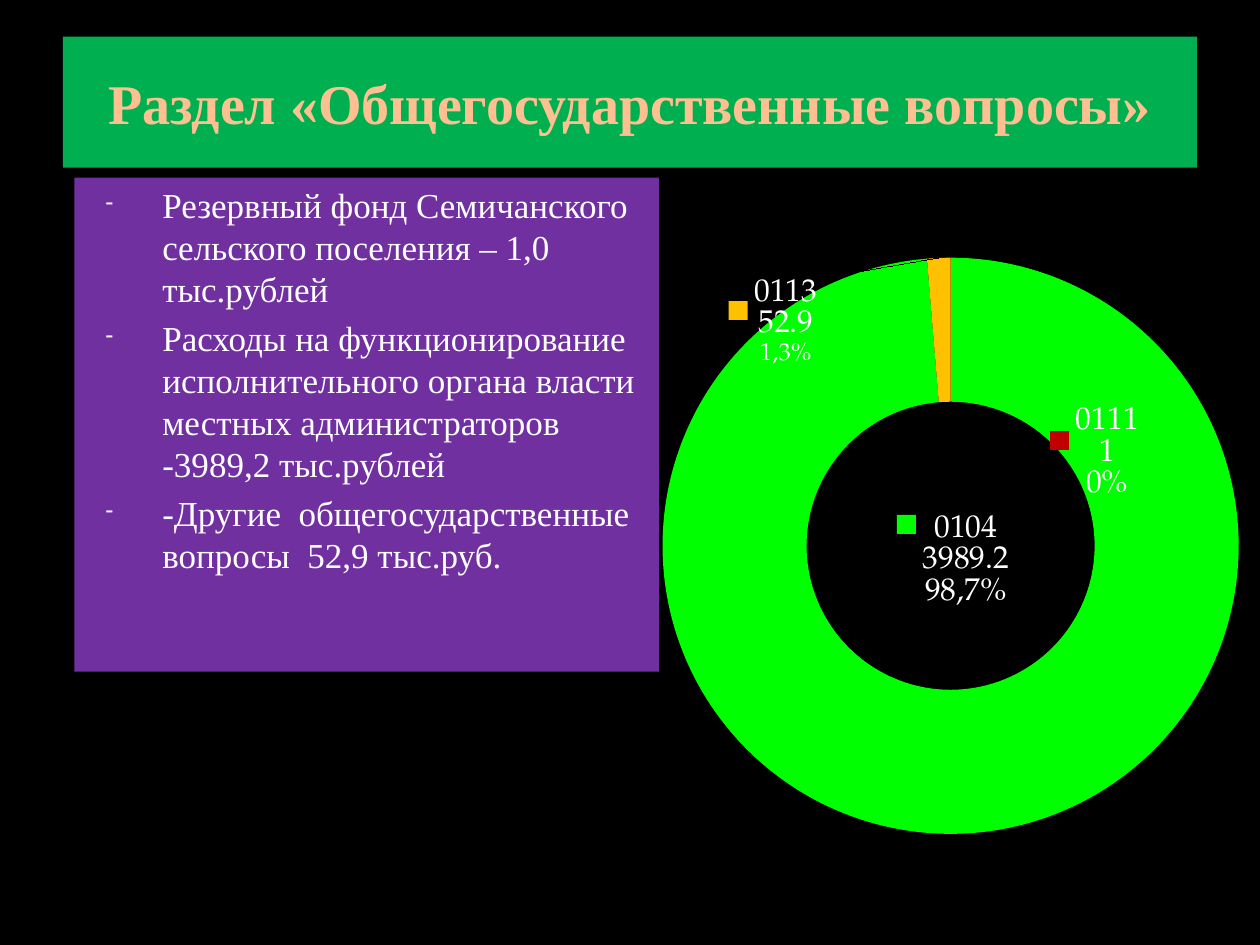
from lxml import etree
from pptx import Presentation
from pptx.chart.data import CategoryChartData
from pptx.dml.color import RGBColor
from pptx.enum.chart import XL_CHART_TYPE as ChartType
from pptx.enum.shapes import MSO_SHAPE as Shape
from pptx.enum.text import MSO_ANCHOR as Anchor, PP_ALIGN as Align
from pptx.oxml import parse_xml
from pptx.oxml.ns import nsdecls, qn
from pptx.util import Inches, Pt

BLACK = RGBColor(0x00, 0x00, 0x00)
WHITE = RGBColor(0xFF, 0xFF, 0xFF)
GREEN = RGBColor(0x00, 0xB0, 0x50)
PURPLE = RGBColor(0x70, 0x30, 0xA0)
PEACH = RGBColor(0xFF, 0xC0, 0x91)
RED = RGBColor(0xC0, 0x00, 0x00)
LIME = RGBColor(0x00, 0xFF, 0x00)
AMBER = RGBColor(0xFF, 0xC0, 0x00)

TITLE = "Раздел «Общегосударственные вопросы»"
EXPENSES = [
    "Резервный фонд Семичанского сельского поселения – 1,0 тыс.рублей",
    "Расходы на функционирование исполнительного органа власти "
    "местных администраторов -3989,2 тыс.рублей",
    "-Другие  общегосударственные вопросы  52,9 тыс.руб.",
]
# section code, value, colour, label lines with sizes, label offset
SECTIONS = [
    ("0111", 1, RED, [("0111", 18), ("1", 18), ("0%", 18)], (0.23, 0.18)),
    ("0104", 3989.2, LIME,
     [("\n0104", 18), ("3989.2", 18), ("98,7%", 18)], (-0.01, -0.31)),
    ("0113", 52.9, AMBER,
     [("0113", 18), ("52.9", 18), ("1,3%", 14)], (-0.27, -0.01)),
]


def manual_layout(**values):
    """Return a c:layout element with the given settings, in schema order."""
    settings = "".join(f'<c:{name} val="{value}"/>' for name, value in values.items())
    return parse_xml(f'<c:layout {nsdecls("c")}><c:manualLayout>{settings}'
                     "</c:manualLayout></c:layout>")


class SlideBuilder:
    text_font = "Times New Roman"
    chart_font = "TeX Gyre Pagella"

    def __init__(self, slide):
        self.slide = slide
        slide.background.fill.solid()
        slide.background.fill.fore_color.rgb = BLACK

    def style(self, font, name, size, color, bold=False):
        font.name, font.size, font.bold = name, Pt(size), bold
        font.color.rgb = color

    def panel(self, left, top, width, height, color, anchor):
        box = self.slide.shapes.add_shape(
            Shape.RECTANGLE, Inches(left), Inches(top), Inches(width), Inches(height))
        box.shadow.inherit = False
        box.fill.solid()
        box.fill.fore_color.rgb = color
        box.line.fill.background()
        box.text_frame.word_wrap = True
        box.text_frame.vertical_anchor = anchor
        return box.text_frame

    def add_text(self, para, text, name, size, color, bold=False):
        span = para.add_run()
        span.text = text
        self.style(span.font, name, size, color, bold)

    def title(self, text, *place):
        para = self.panel(*place, GREEN, Anchor.MIDDLE).paragraphs[0]
        para.alignment = Align.CENTER
        self.add_text(para, text, self.text_font, 32, PEACH, True)

    def bullets(self, items, *place):
        frame = self.panel(*place, PURPLE, Anchor.TOP)
        for index, item in enumerate(items):
            para = frame.add_paragraph() if index else frame.paragraphs[0]
            para.alignment = Align.LEFT
            para.space_before = Pt(4)
            self.add_text(para, item, self.text_font, 20, WHITE)
            self.add_dash(para)

    def add_dash(self, para):
        props = para._p.get_or_add_pPr()
        props.set("marL", str(Inches(0.6)))
        props.set("indent", str(Inches(-0.45)))
        color = etree.SubElement(props, qn("a:buClr"))
        etree.SubElement(color, qn("a:srgbClr"), val="F9F9F9")
        etree.SubElement(props, qn("a:buSzPct"), val="65000")
        etree.SubElement(props, qn("a:buFontTx"))
        etree.SubElement(props, qn("a:buChar"), char="-")

    def doughnut(self, sections, left, top, width, height):
        data = CategoryChartData()
        data.categories = [section[0] for section in sections]
        data.add_series("%", [section[1] for section in sections])
        chart = self.slide.shapes.add_chart(
            ChartType.DOUGHNUT, Inches(left), Inches(top),
            Inches(width), Inches(height), data).chart
        chart.has_legend = False
        chart.has_title = False
        self.style(chart.font, self.chart_font, 18, WHITE)
        plot = chart.plots[0]
        plot.vary_by_categories = True
        plot._element.find(qn("c:holeSize")).set("val", "50")
        area = plot._element.getparent()
        for old in area.findall(qn("c:layout")):
            area.remove(old)
        area.insert(0, manual_layout(layoutTarget="inner", xMode="edge", yMode="edge",
                                     x=0.01, y=0.09, w=0.99, h=0.83))
        series = plot.series[0]
        self.show_all_parts(series.data_labels._element)
        for index, (_, _, color, lines, offset) in enumerate(sections):
            point = series.points[index]
            point.format.fill.solid()
            point.format.fill.fore_color.rgb = color
            point.format.line.fill.background()
            self.point_label(point.data_label, lines, offset)

    def show_all_parts(self, element):
        for part in ("LegendKey", "Val", "CatName", "SerName", "Percent"):
            element.find(qn(f"c:show{part}")).set("val", "1")

    def point_label(self, label, lines, offset):
        frame = label.text_frame
        for index, (text, size) in enumerate(lines):
            para = frame.add_paragraph() if index else frame.paragraphs[0]
            self.add_text(para, text, self.chart_font, size, WHITE)
        element = frame._txBody.getparent().getparent()
        for old in element.findall(qn("c:layout")):
            element.remove(old)
        element.find(qn("c:idx")).addnext(manual_layout(x=offset[0], y=offset[1]))
        self.show_all_parts(element)


def main():
    deck = Presentation()
    deck.slide_width, deck.slide_height = Inches(10), Inches(7.5)
    page = SlideBuilder(deck.slides.add_slide(deck.slide_layouts[6]))
    page.title(TITLE, 0.5, 0.29, 9, 1.04)
    page.bullets(EXPENSES, 0.59, 1.41, 4.64, 3.92)
    page.doughnut(SECTIONS, 5.04, 1.55, 4.96, 5.51)
    deck.save("out.pptx")


if __name__ == "__main__":
    main()
